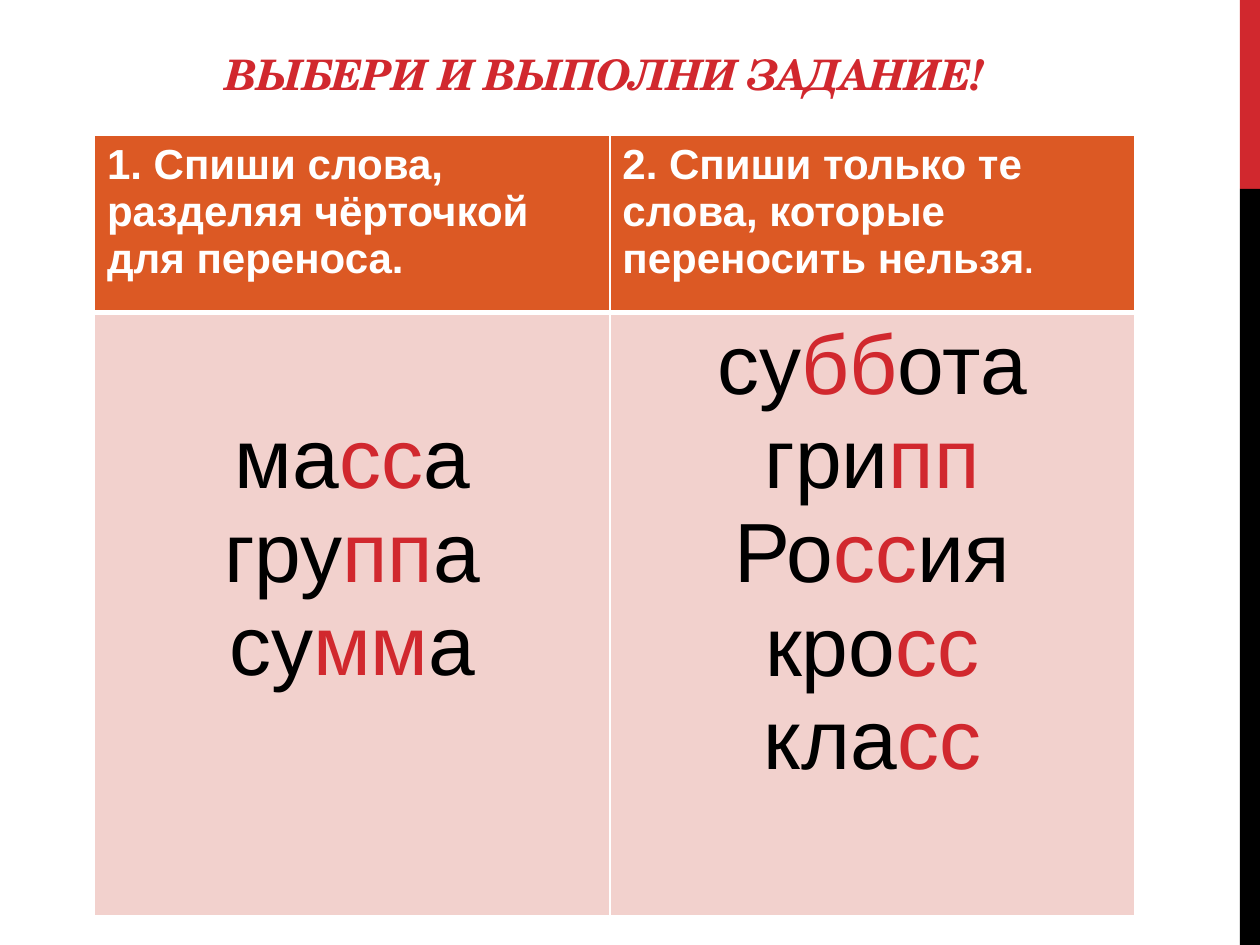
from dataclasses import dataclass
from typing import Any

from lxml.etree import SubElement
from pptx import Presentation
from pptx.dml.color import RGBColor
from pptx.enum.shapes import MSO_SHAPE
from pptx.enum.text import MSO_ANCHOR, MSO_AUTO_SIZE, PP_ALIGN
from pptx.oxml.ns import qn
from pptx.util import Pt

RED = "D1282E"
BLACK = "000000"
WHITE = "FFFFFF"
ORANGE = "DC5924"
PINK = "F2D1CD"


@dataclass
class Run:
    text: str
    size: float
    color: str
    bold: bool = False
    italic: bool = False
    font: str = "Arial"


@dataclass
class Bar:
    top: float
    height: float
    color: str


@dataclass
class Task:
    heading: list[Run]
    words: list[tuple[str, str, str]]
    top_inset: float


def rgb(color: str) -> RGBColor:
    return RGBColor.from_string(color)


def add_run(p: Any, run: Run) -> Any:
    r = p.add_run()
    r.text = run.text
    r.font.size = Pt(run.size)
    r.font.bold = run.bold
    r.font.italic = run.italic
    r.font.name = run.font
    r.font.color.rgb = rgb(run.color)
    return r


def draw_bar(slide: Any, bar: Bar) -> None:
    sp = slide.shapes.add_shape(
        MSO_SHAPE.RECTANGLE, Pt(708.5), Pt(bar.top), Pt(11.5), Pt(bar.height)
    )
    sp.shadow.inherit = False
    sp.fill.solid()
    sp.fill.fore_color.rgb = rgb(bar.color)
    sp.line.fill.background()


def draw_title(slide: Any, run: Run) -> None:
    sp = slide.shapes.title
    sp.left, sp.top, sp.width, sp.height = Pt(121.7), Pt(12.2), Pt(550), Pt(48.2)
    tf = sp.text_frame
    tf.word_wrap = True
    tf.auto_size = MSO_AUTO_SIZE.NONE
    tf.vertical_anchor = MSO_ANCHOR.BOTTOM
    p = tf.paragraphs[0]
    p.alignment = PP_ALIGN.LEFT
    r = add_run(p, run)
    r.font._element.set("spc", "-60")


def style_cell(cell: Any, fill: str, top: float, bottom: float) -> None:
    tc_pr = cell._tc.get_or_add_tcPr()
    for side, width in (("L", 1), ("R", 1), ("T", top), ("B", bottom)):
        ln = SubElement(tc_pr, qn(f"a:ln{side}"), w=str(Pt(width)))
        solid = SubElement(ln, qn("a:solidFill"))
        SubElement(solid, qn("a:srgbClr"), val=WHITE)
    cell.fill.solid()
    cell.fill.fore_color.rgb = rgb(fill)


def draw_task(table: Any, col: int, task: Task) -> None:
    head, body = table.cell(0, col), table.cell(1, col)
    style_cell(head, ORANGE, 1, 3)
    style_cell(body, PINK, 3, 1)
    for run in task.heading:
        add_run(head.text_frame.paragraphs[0], run)
    body.margin_top = Pt(task.top_inset)
    tf = body.text_frame
    for i, (start, double, end) in enumerate(task.words):
        p = tf.add_paragraph() if i else tf.paragraphs[0]
        p.alignment = PP_ALIGN.CENTER
        for text, color in ((start, BLACK), (double, RED), (end, BLACK)):
            if text:
                add_run(p, Run(text, 48, color))


def main() -> None:
    prs = Presentation()
    prs.slide_width, prs.slide_height = Pt(720), Pt(540)
    slide = prs.slides.add_slide(prs.slide_layouts[5])

    for bar in (Bar(0, 108, RED), Bar(108, 432, BLACK)):
        draw_bar(slide, bar)

    draw_title(
        slide,
        Run("ВЫБЕРИ И ВЫПОЛНИ ЗАДАНИЕ!", 24, RED, True, True, "TeX Gyre Schola"),
    )

    tasks = [
        Task(
            [Run("1. Спиши слова, разделяя чёрточкой для переноса.", 24, WHITE, True)],
            [("ма", "сс", "а"), ("гру", "пп", "а"), ("су", "мм", "а")],
            57.2,
        ),
        Task(
            [
                Run("2. Спиши только те слова, которые переносить нельзя", 24, WHITE, True),
                Run(".", 18, WHITE, True),
            ],
            [
                ("су", "бб", "ота"),
                ("гри", "пп", ""),
                ("Ро", "сс", "ия"),
                ("кро", "сс", ""),
                ("кла", "сс", ""),
            ],
            3.6,
        ),
    ]
    widths, heights = (294.5, 300), (101, 345)
    table = slide.shapes.add_table(
        2, 2, Pt(54), Pt(77.4), Pt(sum(widths)), Pt(sum(heights))
    ).table
    for column, width in zip(table.columns, widths):
        column.width = Pt(width)
    for row, height in zip(table.rows, heights):
        row.height = Pt(height)
    for col, task in enumerate(tasks):
        draw_task(table, col, task)

    prs.save("out.pptx")


if __name__ == "__main__":
    main()
